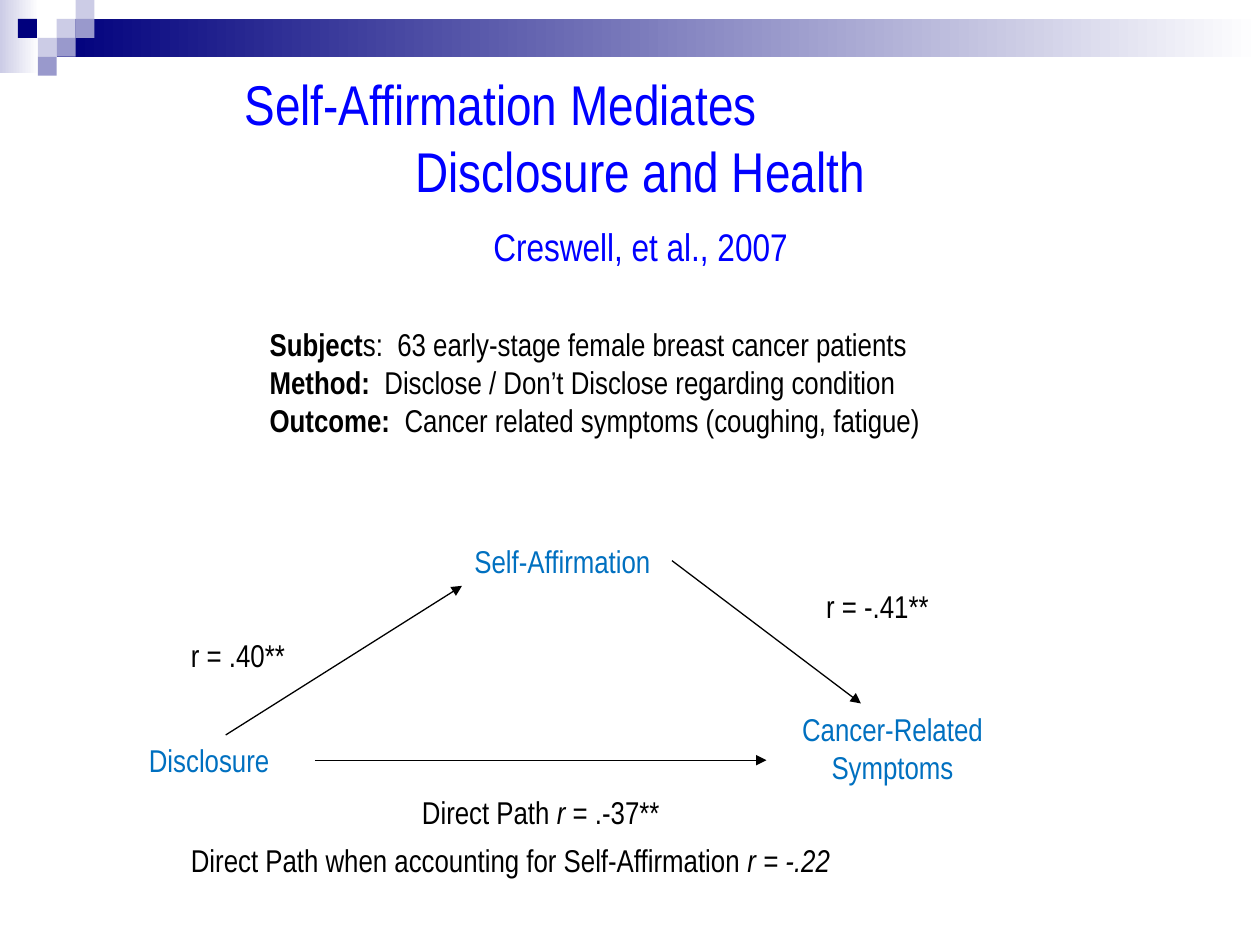
from lxml.etree import SubElement
from pptx import Presentation
from pptx.dml.color import RGBColor
from pptx.enum.shapes import MSO_CONNECTOR, MSO_SHAPE
from pptx.enum.text import MSO_AUTO_SIZE, PP_ALIGN
from pptx.oxml.ns import qn
from pptx.util import Inches, Pt

COLORS = {
    "navy": "00007D", "lilac": "CCCCE6", "violet": "9999CC", "white": "FFFFFF",
    "title": "0000FF", "node": "0070C0", "black": "000000",
}
FONT = "Arial Narrow"
GRID = 1 / 12   # layout grid: 120 columns by 90 rows
TILE = 0.15     # side of a tile in the corner pattern
TOP, RIGHT = 0, 3


def color(name):
    return RGBColor.from_string(COLORS[name])


def cells(*counts):
    return [Inches(count * GRID) for count in counts]


def add_block(page, left, top, width, height, *tones):
    """A borderless rectangle in inches: one tone is solid, two fade across."""
    block = page.shapes.add_shape(
        MSO_SHAPE.RECTANGLE, *map(Inches, (left, top, width, height)))
    block.shadow.inherit = False
    block.line.fill.background()
    if len(tones) == 1:
        block.fill.solid()
        block.fill.fore_color.rgb = color(tones[0])
    else:
        block.fill.gradient()
        block.fill.gradient_angle = 0
        for stop, tone in zip(block.fill.gradient_stops, tones):
            stop.color.rgb = color(tone)


def style_para(para, tone, size, align):
    para.alignment = align
    para.font.name = FONT
    para.font.size = Pt(size)
    para.font.color.rgb = color(tone)


def add_text(page, area, lines, tone="black", size=18, align=PP_ALIGN.LEFT):
    """Each line is a list of (text, style); style is "", "bold" or "italic"."""
    box = page.shapes.add_textbox(*cells(*area))
    frame = box.text_frame
    frame.word_wrap = True
    frame.auto_size = MSO_AUTO_SIZE.SHAPE_TO_FIT_TEXT
    for index, line in enumerate(lines):
        para = frame.add_paragraph() if index else frame.paragraphs[0]
        style_para(para, tone, size, align)
        for text, style in line:
            span = para.add_run()
            span.text = text
            if style:
                setattr(span.font, style, True)
    return box


def add_arrow(page, start, end, source=None, side=None):
    arrow = page.shapes.add_connector(
        MSO_CONNECTOR.STRAIGHT, *cells(*start, *end))
    if source is not None:
        arrow.begin_connect(source, side)
    arrow.line.color.rgb = color("black")
    arrow.line.width = Pt(0.75)
    SubElement(arrow.line._get_or_add_ln(), qn("a:tailEnd"), type="triangle")
    SubElement(arrow._element.spPr, qn("a:effectLst"))


def add_banner(page):
    add_block(page, 0, 0, 0.31, 0.58, "lilac", "white")
    add_block(page, 0.45, 0.15, 9.55, 0.3, "navy", "white")
    tiles = [(3, 1, "lilac"), (4, 0, "lilac"), (4, 1, "violet"),
             (2, 2, "lilac"), (0.95, 1, "navy"), (3, 2, "violet"),
             (2, 3, "violet")]
    for column, row, tone in tiles:
        add_block(page, column * TILE, row * TILE, TILE, TILE, tone)


def add_title(page):
    lines = [[("Self-Affirmation Mediates", "")],
             [("Disclosure and Health", "")],
             [("Creswell, et al., 2007", "")]]
    box = add_text(page, (13, 6, 96, 20.8), lines, "title", 32, PP_ALIGN.CENTER)
    first, _, citation = box.text_frame.paragraphs
    # The first line starts left of the centred ones
    first.alignment = PP_ALIGN.LEFT
    first._p.get_or_add_pPr().set("marL", str(Inches(0.76)))
    citation.font.size = Pt(22)
    citation.space_before = Pt(11)


def add_study(page):
    add_text(page, (24.5, 30.4, 77, 12.1), [
        [("Subject", "bold"),
         ("s:  63 early-stage female breast cancer patients", "")],
        [("Method:  ", "bold"),
         ("Disclose / Don’t Disclose regarding condition", "")],
        [("Outcome:  ", "bold"),
         ("Cancer related symptoms (coughing, fatigue)", "")],
    ])


def add_path_model(page):
    # Variables
    disclosure = add_text(page, (13, 70, 17, 4.8), [[("Disclosure", "")]], "node")
    affirmation = add_text(
        page, (44, 51, 20, 4.8), [[("Self-Affirmation", "")]], "node")
    add_text(page, (75, 67, 20, 8.5), [[("Cancer-Related Symptoms", "")]],
             "node", align=PP_ALIGN.CENTER)

    # Paths
    add_arrow(page, (21.5, 70), (44, 55.8), disclosure, TOP)
    add_arrow(page, (64, 53.4), (82, 67), affirmation, RIGHT)
    add_arrow(page, (30, 72.4), (73, 72.4), disclosure, RIGHT)

    # Coefficients
    add_text(page, (39, 74.9, 38.5, 4.8),
             [[("Direct Path", ""), (" r ", "italic"), ("= .-37**", "")]])
    add_text(page, (77.5, 55.3, 15, 4.8), [[("r = -.41**", "")]])
    add_text(page, (17, 60, 15, 4.8), [[("r = .40**", "")]])
    add_text(page, (17, 79.5, 67, 4.8),
             [[("Direct Path when accounting for Self-Affirmation ", ""),
               ("r = -.22", "italic")]])


def main():
    deck = Presentation()
    deck.slide_width, deck.slide_height = cells(120, 90)
    page = deck.slides.add_slide(deck.slide_layouts[6])
    add_banner(page)
    add_title(page)
    add_study(page)
    add_path_model(page)
    deck.save("out.pptx")


if __name__ == "__main__":
    main()
